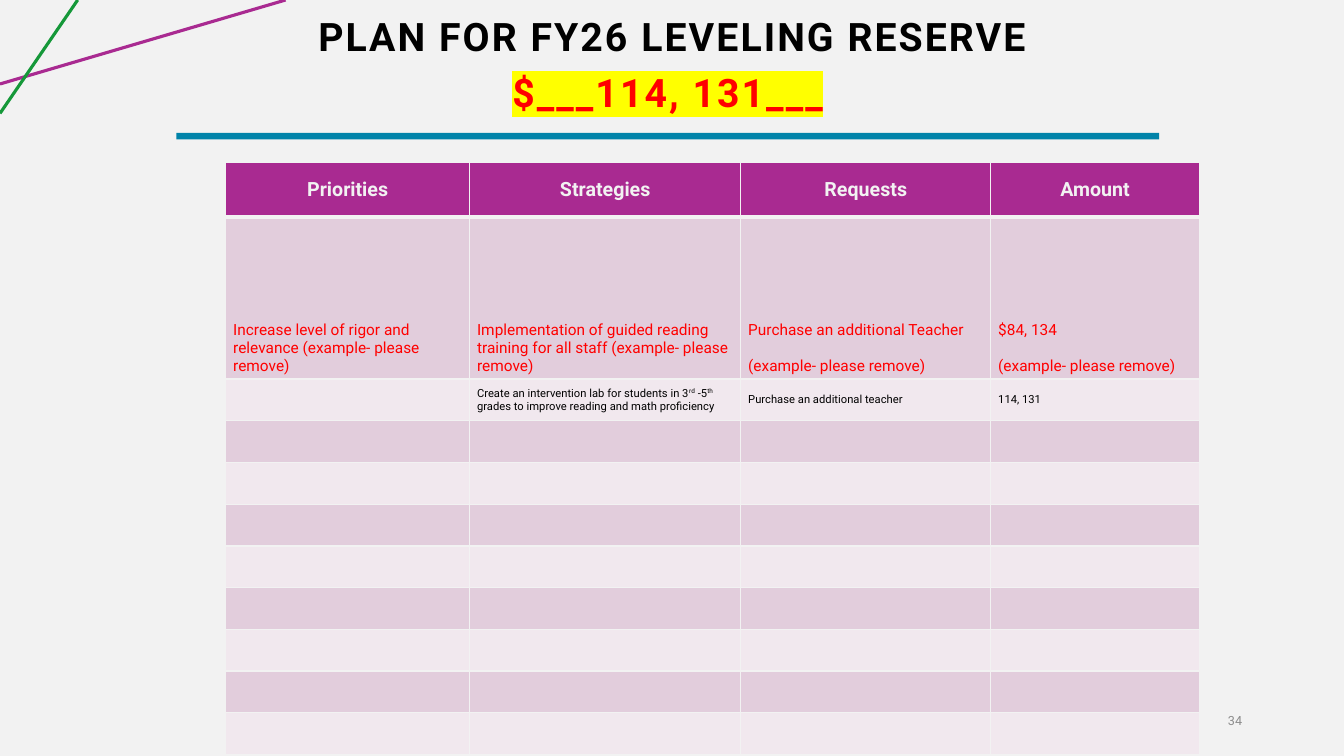
from dataclasses import dataclass

from lxml import etree
from pptx import Presentation
from pptx.dml.color import RGBColor
from pptx.enum.shapes import MSO_CONNECTOR, MSO_SHAPE
from pptx.enum.text import MSO_ANCHOR, MSO_AUTO_SIZE, PP_ALIGN
from pptx.oxml.ns import qn
from pptx.util import Pt

LEFT, CENTER, RIGHT = PP_ALIGN.LEFT, PP_ALIGN.CENTER, PP_ALIGN.RIGHT
MIDDLE, BOTTOM = MSO_ANCHOR.MIDDLE, MSO_ANCHOR.BOTTOM
NO_AUTOFIT = MSO_AUTO_SIZE.NONE
STRAIGHT, RECTANGLE = MSO_CONNECTOR.STRAIGHT, MSO_SHAPE.RECTANGLE
TITLE_ONLY = 5

FONT = "Roboto"
PAPER = RGBColor(0xF2, 0xF2, 0xF2)
BLACK = RGBColor(0x00, 0x00, 0x00)
RED = RGBColor(0xFF, 0x00, 0x00)
YELLOW = RGBColor(0xFF, 0xFF, 0x00)
GRAY = RGBColor(0x8C, 0x8C, 0x8C)
PURPLE = RGBColor(0xA9, 0x2A, 0x91)
GREEN = RGBColor(0x15, 0x98, 0x39)
BLUE = RGBColor(0x00, 0x83, 0xA9)
DARK_BAND = RGBColor(0xE2, 0xCD, 0xDC)
LIGHT_BAND = RGBColor(0xF1, 0xE8, 0xEE)

COLUMN_WIDTHS = [174.2, 193.7, 178.6, 149]
ROW_HEIGHTS = [38.9, 115.9] + [29.8] * 9


@dataclass
class Stripe:
    start: tuple[float, float]
    end: tuple[float, float]
    color: RGBColor


@dataclass
class RowStyle:
    size: float
    color: RGBColor
    bold: bool = False
    align: PP_ALIGN = LEFT
    anchor: MSO_ANCHOR = MIDDLE


@dataclass
class PlanRow:
    cells: list[str]
    style: RowStyle


STRIPES = [
    Stripe((0, 60), (204, 0), PURPLE),
    Stripe((55.5, 0), (0, 81), GREEN),
]

# "\n" parts paragraphs, "^" encloses superscript
PLAN = [
    PlanRow(["Priorities", "Strategies", "Requests", "Amount"],
            RowStyle(14, PAPER, bold=True, align=CENTER)),
    PlanRow(["Increase level of rigor and relevance (example- please remove)",
             "Implementation of guided reading training for all staff (example- please remove)",
             "Purchase an additional Teacher\n(example- please remove)",
             "$84, 134\n(example- please remove)"],
            RowStyle(11, RED, anchor=BOTTOM)),
    PlanRow(["",
             "Create an intervention lab for students in 3^rd^ -5^th^ grades "
             "to improve reading and math proficiency",
             "Purchase an additional teacher", "114, 131"],
            RowStyle(8, BLACK)),
]


def write(frame, text: str, *, size: float, color: RGBColor, bold: bool = False,
          align: PP_ALIGN = LEFT, line_spacing: float = 1, gap: float = 0,
          tracking: float = 0, highlight: RGBColor | None = None) -> None:
    for index, line in enumerate(text.split("\n")):
        paragraph = frame.add_paragraph() if index else frame.paragraphs[0]
        paragraph.alignment = align
        paragraph.line_spacing = line_spacing
        paragraph.space_before = Pt(gap if index else 0)
        for part, words in enumerate(line.split("^")):
            run = paragraph.add_run()
            run.text = words
            font = run.font
            font.name, font.size, font.bold = FONT, Pt(size), bold
            font.color.rgb = color
            properties = run._r.get_or_add_rPr()
            if part % 2:
                properties.set("baseline", "30000")
            if tracking:
                properties.set("spc", str(int(tracking * 100)))
            if highlight is not None:
                marker = etree.Element(qn("a:highlight"))
                etree.SubElement(marker, qn("a:srgbClr"), val=str(highlight))
                properties.find(qn("a:latin")).addprevious(marker)


def place_text(shape, box: tuple[float, float, float, float], text: str, **text_format) -> None:
    shape.left, shape.top, shape.width, shape.height = (Pt(length) for length in box)
    frame = shape.text_frame
    frame.word_wrap = True
    frame.auto_size = NO_AUTOFIT
    frame.vertical_anchor = MIDDLE
    write(frame, text, **text_format)


def draw_stripe(slide, stripe: Stripe) -> None:
    line = slide.shapes.add_connector(
        STRAIGHT, *(Pt(length) for length in stripe.start + stripe.end))
    line.line.color.rgb = stripe.color
    line.line.width = Pt(2.25)
    etree.SubElement(line._element.spPr, qn("a:effectLst"))


def border_cell(cell, row: int) -> None:
    widths = {"lnL": 1, "lnR": 1, "lnT": 3 if row == 1 else 1, "lnB": 3 if row == 0 else 1}
    properties = cell._tc.get_or_add_tcPr()
    for order, (side, width) in enumerate(widths.items()):
        border = etree.Element(qn(f"a:{side}"), w=str(Pt(width)))
        fill = etree.SubElement(border, qn("a:solidFill"))
        etree.SubElement(fill, qn("a:srgbClr"), val=str(PAPER))
        properties.insert(order, border)


def draw_plan(slide) -> None:
    table = slide.shapes.add_table(
        len(ROW_HEIGHTS), len(COLUMN_WIDTHS), Pt(161.3), Pt(116),
        Pt(sum(COLUMN_WIDTHS)), Pt(sum(ROW_HEIGHTS))).table
    for column, width in zip(table.columns, COLUMN_WIDTHS):
        column.width = Pt(width)
    for row, height in enumerate(ROW_HEIGHTS):
        table.rows[row].height = Pt(height)
        for column, cell in enumerate(table.rows[row].cells):
            cell.fill.solid()
            band = DARK_BAND if row % 2 else LIGHT_BAND
            cell.fill.fore_color.rgb = band if row else PURPLE
            cell.margin_left = cell.margin_right = Pt(5.3)
            cell.margin_top = cell.margin_bottom = Pt(2.7)
            border_cell(cell, row)
            if row < len(PLAN) and PLAN[row].cells[column]:
                style = PLAN[row].style
                cell.vertical_anchor = style.anchor
                write(cell.text_frame, PLAN[row].cells[column], size=style.size,
                      color=style.color, bold=style.bold, align=style.align, gap=13)


def main() -> None:
    presentation = Presentation()
    presentation.slide_width, presentation.slide_height = Pt(960), Pt(540)
    slide = presentation.slides.add_slide(presentation.slide_layouts[TITLE_ONLY])
    slide.background.fill.solid()
    slide.background.fill.fore_color.rgb = PAPER

    # Corner stripes
    for stripe in STRIPES:
        draw_stripe(slide, stripe)

    # Heading, reserve amount and page number
    heading_format = dict(size=28, bold=True, align=CENTER, line_spacing=0.9, tracking=1.5)
    place_text(slide.shapes.title, (66.2, 2.9, 828, 49), "PLAN FOR FY26 LEVELING RESERVE",
               color=BLACK, **heading_format)
    reserve = slide.shapes.add_textbox(0, 0, 0, 0)
    place_text(reserve, (108.7, 34.6, 736.6, 66.2), "$___114, 131___",
               color=RED, highlight=YELLOW, **heading_format)
    page_number = slide.shapes.add_textbox(0, 0, 0, 0)
    place_text(page_number, (816.5, 500.4, 77.8, 28.8), "34", size=9, color=GRAY, align=RIGHT)

    # Rule under the heading
    rule = slide.shapes.add_shape(RECTANGLE, Pt(126), Pt(95), Pt(702), Pt(4.5))
    rule.shadow.inherit = False
    rule.fill.solid()
    rule.fill.fore_color.rgb = BLUE
    rule.line.fill.background()

    # Plan table
    draw_plan(slide)
    presentation.save("out.pptx")


if __name__ == "__main__":
    main()
